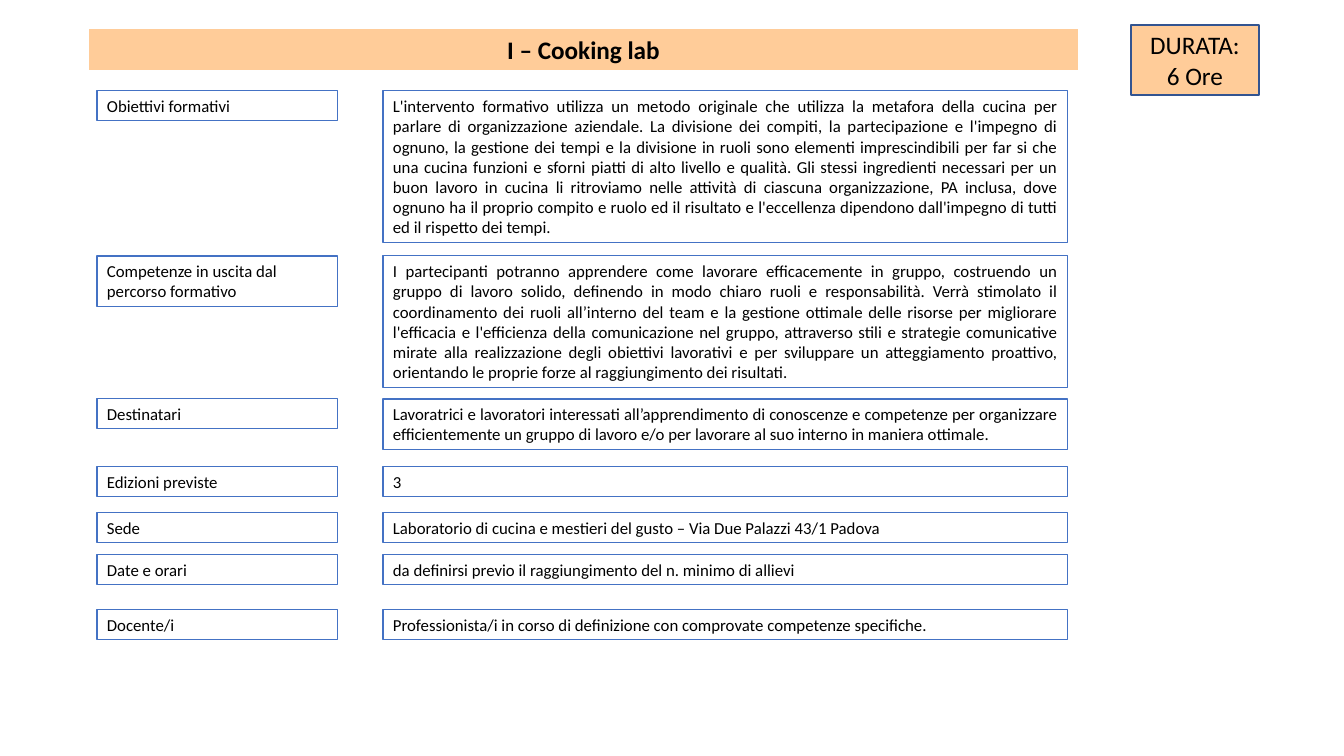
from pptx import Presentation
from pptx.dml.color import RGBColor
from pptx.enum.shapes import MSO_SHAPE
from pptx.enum.text import MSO_ANCHOR, MSO_AUTO_SIZE, PP_ALIGN
from pptx.util import Pt

EMU_PER_PX = 914400 / 100.8
PEACH = RGBColor(0xFF, 0xCC, 0x99)
BLUE = RGBColor(0x44, 0x72, 0xC4)
DARK_BLUE = RGBColor(0x32, 0x54, 0x91)
BLACK = RGBColor(0, 0, 0)
LABEL_WIDTH, DETAIL_LEFT, DETAIL_WIDTH = 241, 286, 685

COURSE_ROWS = [
    (0, 30, 152, "Obiettivi formativi",
     "L'intervento formativo utilizza un metodo originale che utilizza la metafora della cucina per "
     "parlare di organizzazione aziendale. La divisione dei compiti, la partecipazione e l'impegno di "
     "ognuno, la gestione dei tempi e la divisione in ruoli sono elementi imprescindibili per far si che "
     "una cucina funzioni e sforni piatti di alto livello e qualità. Gli stessi ingredienti necessari per un "
     "buon lavoro in cucina li ritroviamo nelle attività di ciascuna organizzazione, PA inclusa, dove "
     "ognuno ha il proprio compito e ruolo ed il risultato e l'eccellenza dipendono dall'impegno di tutti "
     "ed il rispetto dei tempi."),
    (165, 51, 132, "Competenze in uscita dal percorso formativo",
     "I partecipanti potranno apprendere come lavorare efficacemente in gruppo, costruendo un "
     "gruppo di lavoro solido, definendo in modo chiaro ruoli e responsabilità. Verrà stimolato il "
     "coordinamento dei ruoli all’interno del team e la gestione ottimale delle risorse per migliorare "
     "l'efficacia e l'efficienza della comunicazione nel gruppo, attraverso stili e strategie comunicative "
     "mirate alla realizzazione degli obiettivi lavorativi e per sviluppare un atteggiamento proattivo, "
     "orientando le proprie forze al raggiungimento dei risultati."),
    (308, 30, 51, "Destinatari",
     "Lavoratrici e lavoratori interessati all’apprendimento di conoscenze e competenze per organizzare "
     "efficientemente un gruppo di lavoro e/o per lavorare al suo interno in maniera ottimale."),
    (376, 30, 30, "Edizioni previste", "3"),
    (422, 30, 30, "Sede",
     "Laboratorio di cucina e mestieri del gusto – Via Due Palazzi 43/1 Padova"),
    (464, 30, 30, "Date e orari",
     "da definirsi previo il raggiungimento del n. minimo di allievi"),
    (519, 30, 30, "Docente/i",
     "Professionista/i in corso di definizione con comprovate competenze specifiche."),
]


def px(length):
    """Convert px to EMU."""
    return round(length * EMU_PER_PX)


def add_panel(slide, box, text, size=12, align=PP_ALIGN.LEFT, fill=None,
              line=BLUE, line_width=0.75, bold=False, anchor=MSO_ANCHOR.TOP):
    """Draw one rectangle with its text."""
    panel = slide.shapes.add_shape(MSO_SHAPE.RECTANGLE, *map(px, box))
    panel.shadow.inherit = False
    if fill is None:
        panel.fill.background()
    else:
        panel.fill.solid()
        panel.fill.fore_color.rgb = fill
    if line is None:
        panel.line.fill.background()
    else:
        panel.line.color.rgb = line
        panel.line.width = Pt(line_width)
    frame = panel.text_frame
    frame.text = text
    frame.word_wrap = True
    frame.vertical_anchor = anchor
    if anchor == MSO_ANCHOR.TOP:
        frame.auto_size = MSO_AUTO_SIZE.SHAPE_TO_FIT_TEXT
    for paragraph in frame.paragraphs:
        paragraph.alignment = align
        for run in paragraph.runs:
            run.font.name = "Calibri"
            run.font.size = Pt(size)
            run.font.bold = bold
            run.font.color.rgb = BLACK


def add_title(slide, box):
    """Draw the course title band."""
    add_panel(slide, box, "I – Cooking lab", 18, PP_ALIGN.CENTER, PEACH, line=None, bold=True)


def add_duration(slide, box):
    """Draw the duration badge."""
    add_panel(slide, box, "DURATA:\n6 Ore", 18, PP_ALIGN.CENTER, PEACH,
              DARK_BLUE, 1, anchor=MSO_ANCHOR.MIDDLE)


def add_course_rows(slide, left, top):
    """Draw each course label beside its details."""
    for offset, label_height, detail_height, label, detail in COURSE_ROWS:
        row_top = top + offset
        add_panel(slide, (left, row_top, LABEL_WIDTH, label_height), label)
        add_panel(slide, (left + DETAIL_LEFT, row_top, DETAIL_WIDTH, detail_height),
                  detail, align=PP_ALIGN.JUSTIFY)


def main():
    """Build and save the course sheet."""
    deck = Presentation()
    deck.slide_width, deck.slide_height = px(1344), px(756)
    slide = deck.slides.add_slide(deck.slide_layouts[6])
    add_title(slide, (89, 29, 989, 41))
    add_course_rows(slide, 97, 91)
    add_duration(slide, (1131, 25, 128, 70))
    deck.save("out.pptx")


if __name__ == "__main__":
    main()
